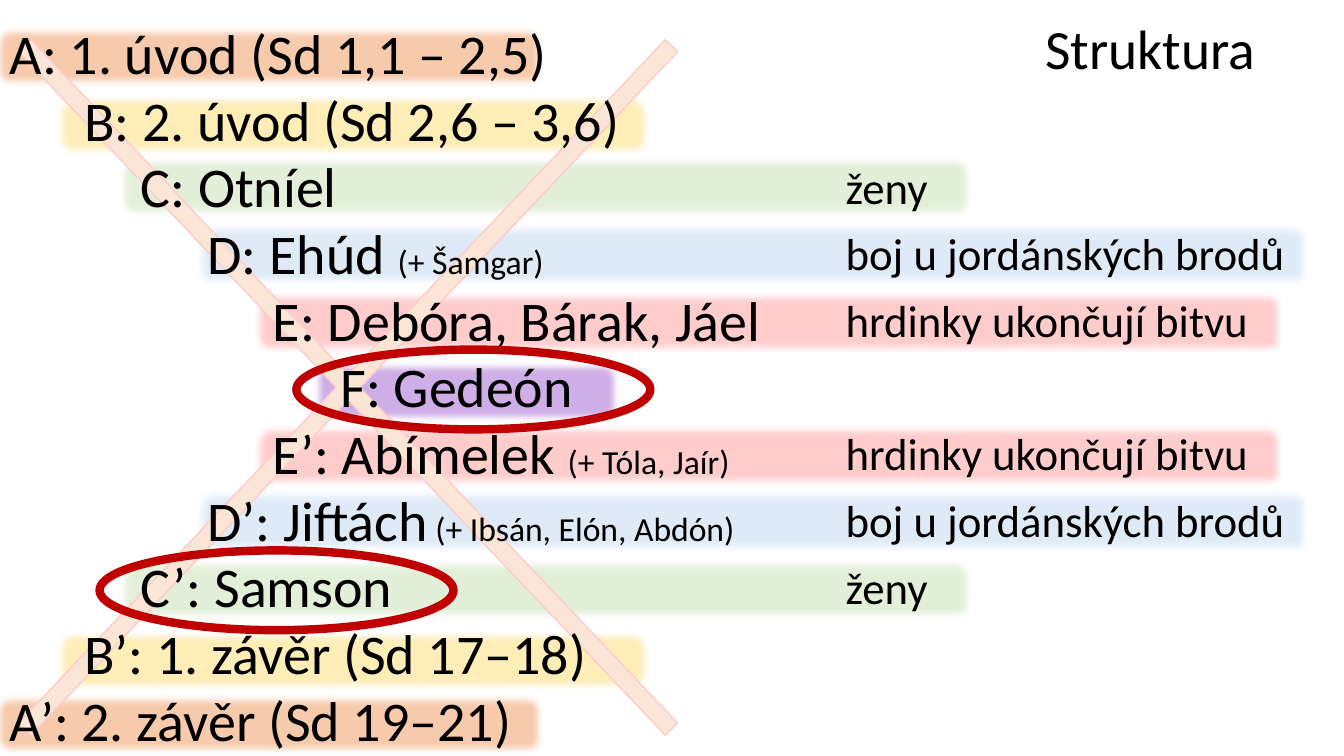
"""Build the slide showing the concentric structure of the book of Judges."""
from dataclasses import dataclass

from lxml import etree
from pptx import Presentation
from pptx.dml.color import RGBColor
from pptx.enum.shapes import MSO_SHAPE
from pptx.enum.text import MSO_ANCHOR, MSO_AUTO_SIZE, PP_ALIGN
from pptx.oxml.ns import qn
from pptx.util import Cm, Pt

ROUNDED, ELLIPSE, CROSS = (
    MSO_SHAPE.ROUNDED_RECTANGLE, MSO_SHAPE.OVAL, MSO_SHAPE.MATH_MULTIPLY)
MIDDLE, NO_FIT = MSO_ANCHOR.MIDDLE, MSO_AUTO_SIZE.NONE
LEFT, CENTER = PP_ALIGN.LEFT, PP_ALIGN.CENTER
TITLE_ONLY = 5

TITLE = "Struktura"
LEVELS = {
    "A": {"left": 0, "band": (-0.13, 13.82), "fill": "F8CBAD"},
    "B": {"left": 1.88, "band": (1.42, 14.94), "fill": "FFEEB7"},
    "C": {"left": 3.3, "band": (3.0, 21.49), "fill": "E2F0D9",
          "theme": "ženy", "theme_width": 9.83},
    "D": {"left": 4.98, "band": (4.98, 27.97), "fill": "DEEBF7",
          "theme": "boj u jordánských brodů", "theme_width": 12.09},
    "E": {"left": 6.63, "band": (6.43, 25.86), "fill": "FFCCCC",
          "theme": "hrdinky ukončují bitvu", "theme_width": 12.09},
    "F": {"left": 8.33, "band": (7.9, 7.72), "fill": "CFAFE7"},
}
# level, label, small addition, label width, band top
ROWS = [
    ("A", "A: 1. úvod (Sd 1,1 – 2,5)", "", 14.5, 0.66),
    ("B", "B: 2. úvod (Sd 2,6 – 3,6)", "", 15.06, 2.39),
    ("C", "C: Otníel", "", 6.6, 3.94),
    ("D", "D: Ehúd ", "(+ Šamgar)", 12.9, 5.66),
    ("E", "E: Debóra, Bárak, Jáel", "", 13.87, 7.37),
    ("F", "F: Gedeón", "", 6.6, 9.12),
    ("E", "E’: Abímelek ", "(+ Tóla, Jaír)", 15.67, 10.72),
    ("D", "D’: Jiftách", " (+ Ibsán, Elón, Abdón)", 15.27, 12.37),
    ("C", "C’: Samson", "", 7.65, 14.1),
    ("B", "B’: 1. závěr (Sd 17–18)", "", 13.46, 15.88),
    ("A", "A’: 2. závěr (Sd 19–21)", "", 14.94, 17.5),
]
RINGS = [(7.47, 8.81), (2.51, 13.87)]
RING_SIZE = (8.92, 2.01)
CROSS_BOX = (-6.91, -6.81, 31.37, 33.15)
TITLE_BOX = (24.71, 0.58, 8.56, 1.45)
FIRST_ROW, ROW_HEIGHT, BAND_HEIGHT, THEME_LEFT = 0.58, 1.68, 1.52, 21.06


@dataclass(frozen=True)
class Theme:
    font: str = "Calibri"
    text: str = "000000"
    cross: str = "FBE5D6"
    cross_line: str = "FFCCCC"
    ring: str = "C00000"
    title_size: float = 39.6
    label_size: float = 40
    theme_size: float = 32
    small_size: float = 24


THEME = Theme()


def write_text(box, text, size, small="", align=LEFT):
    frame = box.text_frame
    frame.word_wrap = True
    frame.auto_size = NO_FIT
    frame.vertical_anchor = MIDDLE
    para = frame.paragraphs[0]
    para.alignment = align
    para.line_spacing = 0.9
    for words, points in ((text, size), (small, THEME.small_size)):
        if words:
            span = para.add_run()
            span.text = words
            span.font.name = THEME.font
            span.font.size = Pt(points)
            span.font.color.rgb = RGBColor.from_string(THEME.text)


def add_figure(page, kind, bounds, fill=None, line=None, line_width=1):
    figure = page.shapes.add_shape(kind, *map(Cm, bounds))
    figure.shadow.inherit = False
    if fill:
        figure.fill.solid()
        figure.fill.fore_color.rgb = RGBColor.from_string(fill)
    else:
        figure.fill.background()
    if line:
        figure.line.color.rgb = RGBColor.from_string(line)
        figure.line.width = Pt(line_width)
    else:
        figure.line.fill.background()
    return figure


def soften(figure):
    effects = figure.element.spPr.find(qn("a:effectLst"))
    etree.SubElement(effects, qn("a:softEdge"), rad="63500")


def main():
    deck = Presentation()
    deck.slide_width, deck.slide_height = Cm(33.87), Cm(19.05)
    page = deck.slides.add_slide(deck.slide_layouts[TITLE_ONLY])

    title = page.shapes.title
    title.left, title.top, title.width, title.height = map(Cm, TITLE_BOX)
    write_text(title, TITLE, THEME.title_size, align=CENTER)

    for level, _, _, _, band_top in ROWS:
        band_left, band_width = LEVELS[level]["band"]
        soften(add_figure(page, ROUNDED, (band_left, band_top, band_width, BAND_HEIGHT),
                          fill=LEVELS[level]["fill"]))

    cross = add_figure(page, CROSS, CROSS_BOX, fill=THEME.cross, line=THEME.cross_line)
    cross.adjustments[0] = 0.014

    for index, (level, label, small, width, _) in enumerate(ROWS):
        style = LEVELS[level]
        top = FIRST_ROW + index * ROW_HEIGHT
        box = page.shapes.add_textbox(*map(Cm, (style["left"], top, width, ROW_HEIGHT)))
        write_text(box, label, THEME.label_size, small=small)
        if "theme" in style:
            bounds = (THEME_LEFT, top, style["theme_width"], ROW_HEIGHT)
            box = page.shapes.add_textbox(*map(Cm, bounds))
            write_text(box, style["theme"], THEME.theme_size)

    for corner in RINGS:
        add_figure(page, ELLIPSE, corner + RING_SIZE, line=THEME.ring, line_width=6)

    deck.save("out.pptx")


if __name__ == "__main__":
    main()
